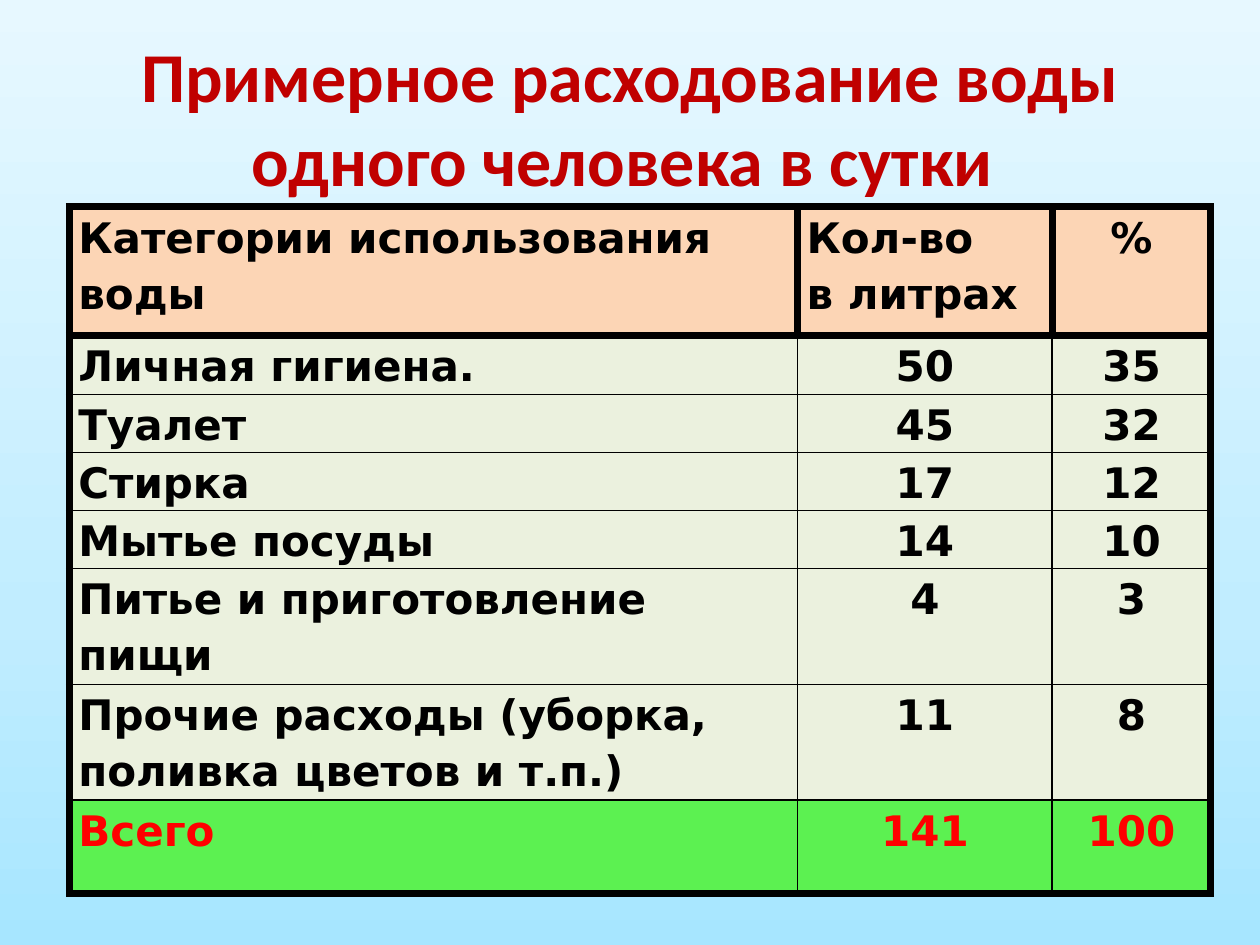
"""Build a slide with a table of one person's daily water use."""
from copy import deepcopy

from lxml.etree import SubElement
from pptx import Presentation
from pptx.dml.color import RGBColor
from pptx.enum.text import MSO_ANCHOR as Anchor, PP_ALIGN as Align
from pptx.oxml.ns import qn
from pptx.util import Cm, Pt


def color(value):
    return RGBColor.from_string(value)


def add_border(cell, side, width):
    line = SubElement(cell._tc.get_or_add_tcPr(), qn(f"a:ln{side}"), w=str(Pt(width)))
    fill = SubElement(line, qn("a:solidFill"))
    SubElement(fill, qn("a:srgbClr"), val="000000")


presentation = Presentation()
presentation.slide_width = Cm(25.4)
presentation.slide_height = Cm(19.05)
slide = presentation.slides.add_slide(presentation.slide_layouts[6])

background = slide.background.fill
background.gradient()
background.gradient_angle = 90
stop_list = next(slide.element.iter(qn("a:gsLst")))
stop_list.insert(1, deepcopy(stop_list[0]))
stops = [(0, "A7E6FF"), (0.35, "C1EDFF"), (1, "E7F8FF")]
for stop, (position, value) in zip(background.gradient_stops, stops):
    stop.position = position
    stop.color.rgb = color(value)

title = slide.shapes.add_textbox(Cm(1.27), Cm(0.76), Cm(22.86), Cm(3.18))
title.text_frame.word_wrap = True
title.text_frame.vertical_anchor = Anchor.MIDDLE
paragraph = title.text_frame.paragraphs[0]
paragraph.text = "Примерное расходование воды одного человека в сутки "
paragraph.alignment = Align.CENTER
paragraph.font.name = "Calibri"
paragraph.font.size = Pt(40)
paragraph.font.bold = True
paragraph.font.color.rgb = color("C00000")

rows = [
    ("Категории использования воды", "Кол-во\nв литрах", "%"),
    ("Личная гигиена.", "50", "35"),
    ("Туалет", "45", "32"),
    ("Стирка", "17", "12"),
    ("Мытье посуды", "14", "10"),
    ("Питье и приготовление пищи", "4", "3"),
    ("Прочие расходы (уборка, поливка цветов и т.п.)", "11", "8"),
    ("Всего", "141", "100"),
]
column_widths = [14.68, 5.13, 3.2]
row_heights = [2.59, 1.19, 0.89, 0.89, 0.89, 1.8, 1.88, 1.88]
last_row, last_column = len(rows) - 1, len(column_widths) - 1

table = slide.shapes.add_table(
    len(rows), len(column_widths), Cm(1.4), Cm(4.17),
    Cm(sum(column_widths)), Cm(sum(row_heights))).table
for column, width in zip(table.columns, column_widths):
    column.width = Cm(width)
for row, height in zip(table.rows, row_heights):
    row.height = Cm(height)

for i, texts in enumerate(rows):
    header, total = i == 0, i == last_row
    fill_color = "FCD5B5" if header else "5CF151" if total else "EBF1DE"
    for j, text in enumerate(texts):
        cell = table.cell(i, j)
        cell.margin_left = cell.margin_right = Cm(0.18)
        cell.margin_top = cell.margin_bottom = 0
        thick_sides = {
            "L": header or j == 0,
            "R": header or j == last_column,
            "T": i <= 1,
            "B": header or total,
        }
        for side, thick in thick_sides.items():
            add_border(cell, side, 4.5 if thick else 1)
        cell.fill.solid()
        cell.fill.fore_color.rgb = color(fill_color)
        cell.text = text
        centered = j == last_column or (j > 0 and not header)
        for paragraph in cell.text_frame.paragraphs:
            paragraph.alignment = Align.CENTER if centered else Align.LEFT
            paragraph.line_spacing = 1.15
            paragraph.font.name = "DejaVu Sans"
            paragraph.font.size = Pt(24)
            paragraph.font.bold = True
            paragraph.font.color.rgb = color("FF0000" if total else "000000")

presentation.save("out.pptx")
